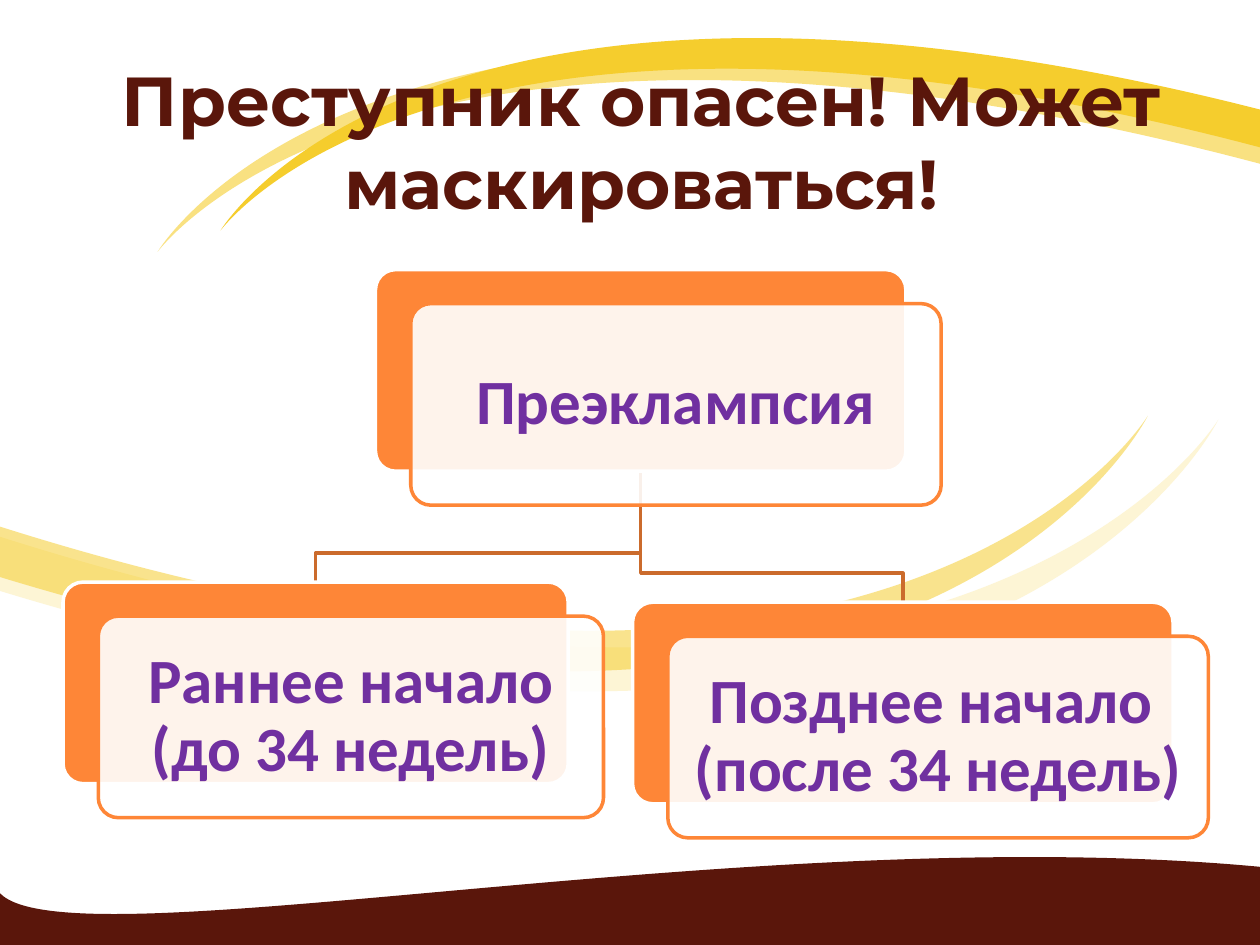
"""Build a slide on the two forms of preeclampsia over a wavy background."""
import dataclasses
import typing

import pptx
import pptx.dml.color
import pptx.enum.shapes
import pptx.enum.text
import pptx.oxml.ns
import pptx.util
from lxml import etree

Inches = pptx.util.Inches
Pt = pptx.util.Pt
qn = pptx.oxml.ns.qn
Point = tuple[float, float]

COLORS = {
    "brown": "5A160B", "cream": "FDF5D5", "pale": "F9E181", "gold": "F5CD2D",
    "orange": "FE8637", "rust": "CB6B2C", "violet": "7030A0", "white": "FFFFFF",
}
HIGH, RIGHT, DOWN = 1.6, 0.28, 0.27
DROP, PAD, INSET = 0.23, 0.04, 0.15


@dataclasses.dataclass
class Wave:
    """An outline of a start and cubic curves, three knots to a curve."""
    color: str
    start: Point
    knots: list[Point]
    tail: list[Point] = dataclasses.field(default_factory=list)
    alpha: int = 100


@dataclasses.dataclass
class Card:
    """A labelled card, placed by its rear plate."""
    text: str
    left: float
    top: float
    width: float

    @property
    def mid(self) -> float:
        """Give the middle of the rear plate."""
        return self.left + self.width / 2


WAVES = [
    Wave("brown", (0, 7.09), [(0.56, 7.67), (5.96, 6.5), (10, 6.88),
                              (10, 7.09), (10, 7.32), (10, 7.5)], [(0, 7.5)]),
    Wave("cream", (0, 4.26), [(7.63, 6.68), (9.67, 3.33), (9.67, 3.33),
                              (9.67, 3.33), (7.82, 7.08), (0, 4.69)]),
    Wave("pale", (10, 1.3), [(3.09, -0.53), (1.25, 2), (1.25, 2),
                             (1.25, 2), (2.92, -0.83), (10, 0.97)]),
    Wave("gold", (10, 1.17), [(3.49, -0.55), (1.75, 1.83), (1.75, 1.83),
                              (1.75, 1.83), (3.33, -0.83), (10, 0.87)]),
    Wave("gold", (0, 4.18), [(7.2, 6.46), (9.11, 3.3), (9.11, 3.3),
                             (9.11, 3.3), (7.37, 6.83), (0, 4.58)], alpha=54),
]
ROOT = Card("Преэклампсия", 2.98, 2.14, 4.21)
KIDS = [
    Card("Раннее начало (до 34 недель)", 0.5, 4.62, 4.01),
    Card("Позднее начало  (после 34 недель)", 5.02, 4.78, 4.29),
]


def get_rgb(name: str) -> pptx.dml.color.RGBColor:
    """Look up a colour by name."""
    return pptx.dml.color.RGBColor.from_string(COLORS[name])


def paint(shape: typing.Any, fill: str | None, line: str | None, alpha: int = 100) -> None:
    """Set fill, outline and opacity, without shadow."""
    shape.shadow.inherit = False
    if fill:
        shape.fill.solid()
        shape.fill.fore_color.rgb = get_rgb(fill)
        if alpha < 100:
            tint = shape.element.find(".//" + qn("a:srgbClr"))
            etree.SubElement(tint, qn("a:alpha"), val=str(alpha * 1000))
    else:
        shape.fill.background()
    if line:
        shape.line.color.rgb = get_rgb(line)
        shape.line.width = Pt(2)
    else:
        shape.line.fill.background()


def style(frame: typing.Any, text: str, font: str, size: float, color: str) -> None:
    """Fill a frame with bold centred text."""
    frame.text = text
    frame.word_wrap = True
    frame.vertical_anchor = pptx.enum.text.MSO_ANCHOR.MIDDLE
    line = frame.paragraphs[0]
    line.alignment = pptx.enum.text.PP_ALIGN.CENTER
    face = line.runs[0].font
    face.name, face.size, face.bold = font, Pt(size), True
    face.color.rgb = get_rgb(color)


def trace(shapes: typing.Any, points: list[Point], close: bool) -> typing.Any:
    """Draw an outline through points given in inches."""
    spots = [(Inches(x), Inches(y)) for x, y in points]
    pen = shapes.build_freeform(*spots[0])
    pen.add_line_segments(spots[1:], close=close)
    return pen.convert_to_shape()


def draw_wave(shapes: typing.Any, wave: Wave) -> None:
    """Draw a filled outline and turn each three of its lines into a curve."""
    shape = trace(shapes, [wave.start, *wave.knots, *wave.tail], True)
    lines = list(shape.element.iter(qn("a:lnTo")))[:len(wave.knots)]
    for first, *rest in zip(lines[::3], lines[1::3], lines[2::3]):
        first.tag = qn("a:cubicBezTo")
        for line in rest:
            first.append(line[0])
            line.getparent().remove(line)
    paint(shape, wave.color, None, wave.alpha)


def draw_link(shapes: typing.Any, root: Card, kid: Card) -> None:
    """Draw a bent line from the root card down to a lower one."""
    bend = kid.top - DROP
    points = [(root.mid, root.top + HIGH), (root.mid, bend), (kid.mid, bend), (kid.mid, kid.top)]
    paint(trace(shapes, points, False), None, "rust")


def draw_plate(shapes: typing.Any, left: float, top: float, width: float,
               fill: str, line: str, alpha: int = 100) -> None:
    """Draw a rounded plate."""
    plate = shapes.add_shape(pptx.enum.shapes.MSO_SHAPE.ROUNDED_RECTANGLE,
                             Inches(left), Inches(top), Inches(width), Inches(HIGH))
    plate.adjustments[0] = 0.1
    paint(plate, fill, line, alpha)


def draw_card(shapes: typing.Any, card: Card) -> None:
    """Draw a solid plate, a clear one shifted over it, and the label."""
    left, top = card.left + RIGHT, card.top + DOWN
    draw_plate(shapes, card.left, card.top, card.width, "orange", "white")
    draw_plate(shapes, left, top, card.width, "white", "orange", 90)
    label = shapes.add_textbox(Inches(left + PAD), Inches(top + PAD),
                               Inches(card.width - 2 * PAD), Inches(HIGH - 2 * PAD))
    frame = label.text_frame
    style(frame, card.text, "Calibri", 36, "violet")
    frame.paragraphs[0].line_spacing = 0.9
    frame.margin_left = frame.margin_right = Inches(INSET)
    frame.margin_top = frame.margin_bottom = Inches(INSET)


def main() -> None:
    """Build and save the deck."""
    deck = pptx.Presentation()
    deck.slide_width, deck.slide_height = Inches(10), Inches(7.5)
    slide = deck.slides.add_slide(deck.slide_layouts[5])
    shapes = slide.shapes
    for wave in WAVES:
        draw_wave(shapes, wave)
    title = shapes.title
    title.element.getparent().append(title.element)
    title.left, title.top = Inches(0.59), Inches(0.36)
    title.width, title.height = Inches(9), Inches(1.5)
    style(title.text_frame, "Преступник опасен! Может маскироваться!", "Montserrat", 39.6, "brown")
    for kid in reversed(KIDS):
        draw_link(shapes, ROOT, kid)
    for card in (ROOT, *KIDS):
        draw_card(shapes, card)
    deck.save("out.pptx")


if __name__ == "__main__":
    main()
